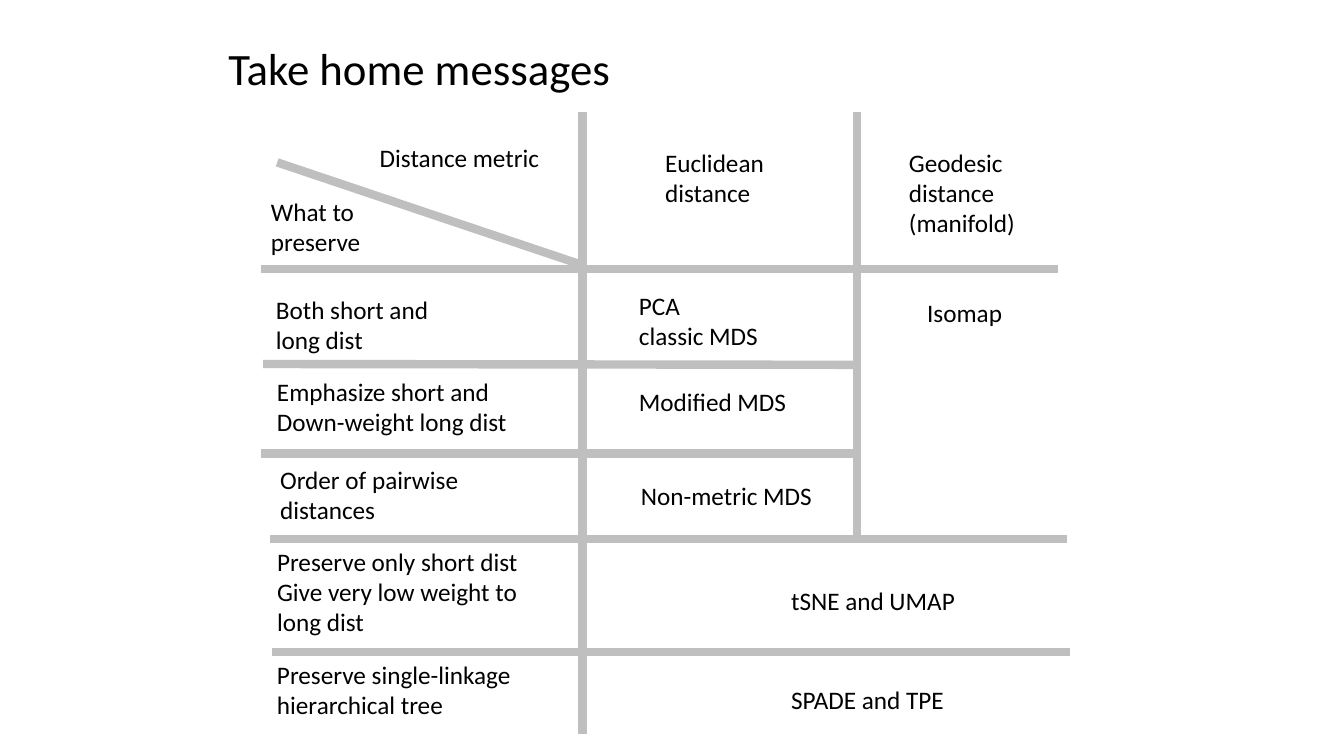
"""Build the take-home table of distance-preserving embedding methods."""
from lxml import etree
from pptx import Presentation
from pptx import util as u
from pptx.dml.color import RGBColor
from pptx.enum import shapes, text
from pptx.oxml import ns

BLACK = RGBColor(0x00, 0x00, 0x00)
RULE_GREY = RGBColor(0xBF, 0xBF, 0xBF)

HEADINGS = [
    (264.2, 98, 130, ["Distance metric"]),
    (186.5, 136.8, 80, ["What to", "preserve"]),
    (468, 101.5, 86, ["Euclidean", "distance"]),
    (642.2, 101.5, 92, ["Geodesic", "distance", "(manifold)"]),
]
GOALS = [
    (190, 206.6, 137.5, ["Both short and", "long dist"]),
    (190.8, 265, 198.7, ["Emphasize short and", "Down-weight long dist"]),
    (193, 328.3, 144, ["Order of pairwise", "distances"]),
    (190.8, 386.6, 193, ["Preserve only short dist", "Give very low weight to", "long dist"]),
    (190.8, 467.3, 188, ["Preserve single-linkage", "hierarchical tree"]),
]
METHODS = [
    (449.3, 203.8, 137.5, ["PCA", "classic MDS"]),
    (449.3, 272.2, 137.5, ["Modified MDS"]),
    (450.7, 339.8, 162, ["Non-metric MDS"]),
    (655.2, 208.8, 83.5, ["Isomap"]),
    (558, 414.7, 156, ["tSNE and UMAP"]),
    (558, 485.3, 149, ["SPADE and TPE"]),
]
GOAL_EDGE, EUCLIDEAN_EDGE, TOP = 416.2, 612, 80
HEADER_DIAGONAL = (198, 116, GOAL_EDGE, 189.4)
COLUMN_RULES = [
    (GOAL_EDGE, TOP, GOAL_EDGE, 524.2),
    (EUCLIDEAN_EDGE, TOP, EUCLIDEAN_EDGE, 386.6),
]
ROW_RULES = [
    (186.5, 192.2, 756, 192.2),
    (188, 260, EUCLIDEAN_EDGE, 260.6),
    (186.5, 324, 610.6, 324),
    (193, 385.2, 762.5, 385.2),
    (194.4, 465.8, 764.6, 465.8),
]


class Board:
    """Holds the style and the current slide."""

    font = "Calibri"
    size = 18
    line_height = 21.8
    padding = 7.2
    rule_width = 6

    def __init__(self, slide):
        self.slide = slide

    def fill_lines(self, box, lines, size, anchor, spacing=None):
        frame = box.text_frame
        frame.word_wrap = True
        frame.vertical_anchor = anchor
        for index, line in enumerate(lines):
            paragraph = frame.paragraphs[0] if index == 0 else frame.add_paragraph()
            paragraph.line_spacing = spacing
            run = paragraph.add_run()
            run.text = line
            run.font.name = self.font
            run.font.size = u.Pt(size)
            run.font.color.rgb = BLACK
        return frame

    def title(self, wording):
        box = self.slide.shapes.add_textbox(u.Pt(156), u.Pt(6), u.Pt(648), u.Pt(90))
        self.fill_lines(box, [wording], 32, text.MSO_ANCHOR.MIDDLE, 0.9)

    def entry(self, left, top, width, lines):
        height = self.padding + self.line_height * len(lines)
        box = self.slide.shapes.add_textbox(u.Pt(left), u.Pt(top), u.Pt(width), u.Pt(height))
        frame = self.fill_lines(box, lines, self.size, text.MSO_ANCHOR.TOP)
        frame.auto_size = text.MSO_AUTO_SIZE.SHAPE_TO_FIT_TEXT

    def rule(self, *ends):
        rule = self.slide.shapes.add_connector(
            shapes.MSO_CONNECTOR.STRAIGHT, *(u.Pt(end) for end in ends))
        rule.line.color.rgb = RULE_GREY
        rule.line.width = u.Pt(self.rule_width)
        etree.SubElement(rule._element.spPr, ns.qn("a:effectLst"))


def main():
    deck = Presentation()
    deck.slide_width, deck.slide_height = u.Pt(960), u.Pt(540)
    board = Board(deck.slides.add_slide(deck.slide_layouts[6]))
    board.title("Take home messages")
    for ends in [HEADER_DIAGONAL, *COLUMN_RULES, *ROW_RULES]:
        board.rule(*ends)
    for entry in HEADINGS + GOALS + METHODS:
        board.entry(*entry)
    deck.save("out.pptx")


if __name__ == "__main__":
    main()
